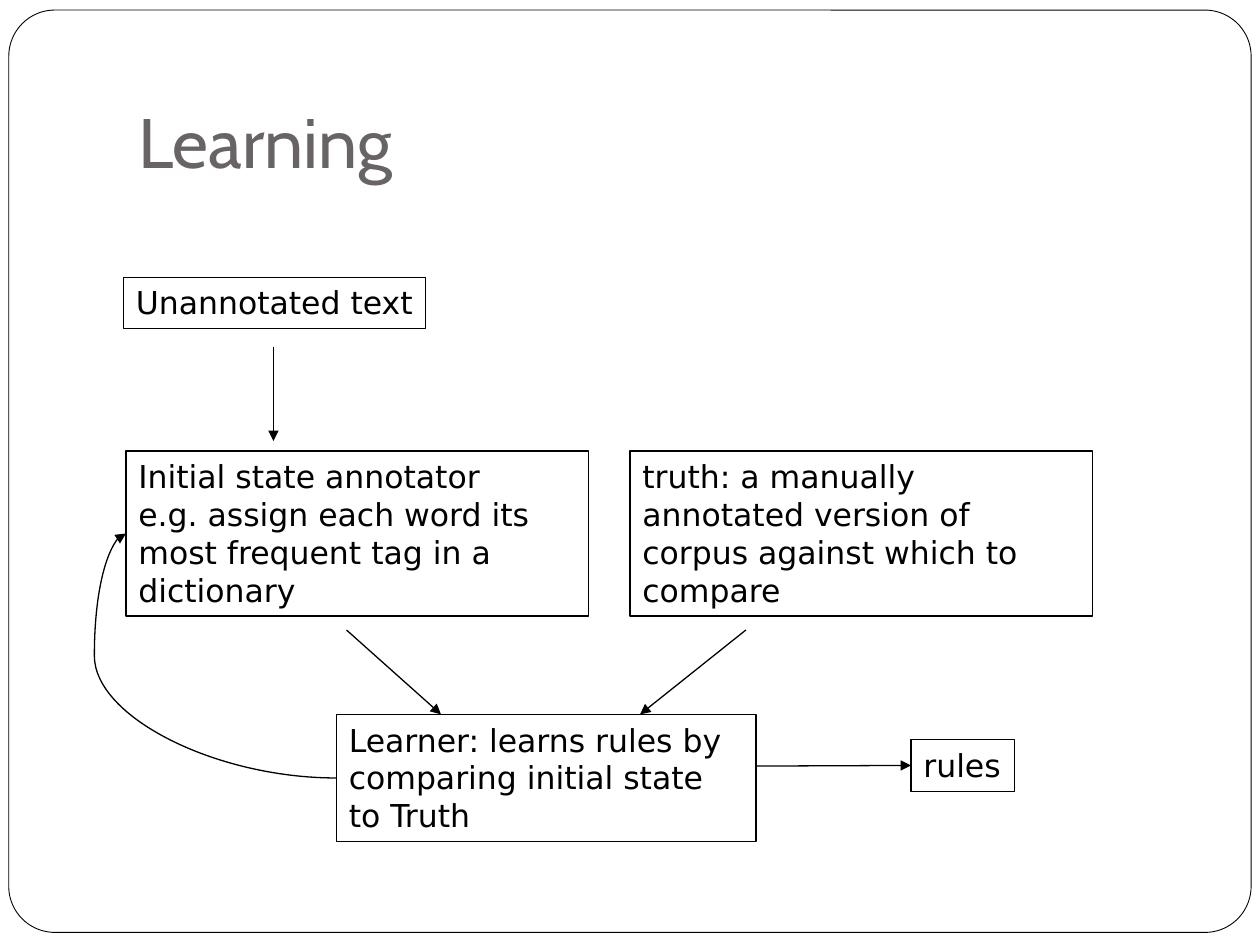
from lxml.etree import SubElement
from pptx import Presentation
from pptx.dml.color import RGBColor
from pptx.enum.shapes import MSO_CONNECTOR as Conn, MSO_SHAPE as Shape
from pptx.enum.text import MSO_ANCHOR as Anchor, MSO_AUTO_SIZE as Fit, PP_ALIGN as Align
from pptx.oxml.ns import qn
from pptx.util import Inches, Pt

BLACK = RGBColor(0x00, 0x00, 0x00)
WHITE = RGBColor(0xFF, 0xFF, 0xFF)
GRAY = RGBColor(0x69, 0x64, 0x64)
LEFT = 1  # connection site on a rectangle


def write(frame, text, font="DejaVu Sans", size=18, color=BLACK):
    frame.text = text
    for par in frame.paragraphs:
        par.alignment = Align.LEFT
        par.font.name = font
        par.font.size = Pt(size)
        par.font.color.rgb = color


def stroke(line, width=0.75):
    line.color.rgb = BLACK
    line.width = Pt(width)


def add_frame(slide, x, y, w, h):
    """Draw the rounded page border behind everything else."""
    card = slide.shapes.add_shape(Shape.ROUNDED_RECTANGLE,
                                  Inches(x), Inches(y), Inches(w), Inches(h))
    card.adjustments[0] = 0.05
    card.shadow.inherit = False
    card.fill.solid()
    card.fill.fore_color.rgb = WHITE
    stroke(card.line, 0.5)
    card.element.getparent().insert(2, card.element)


def add_title(slide, text, x, y, w, h):
    title = slide.shapes.title
    title.left, title.top = Inches(x), Inches(y)
    title.width, title.height = Inches(w), Inches(h)
    frame = title.text_frame
    frame.auto_size = Fit.NONE
    frame.vertical_anchor = Anchor.BOTTOM
    frame.margin_bottom = Inches(0.1)
    write(frame, text, font="Cabin", size=40, color=GRAY)


def add_box(slide, text, x, y, w, h, wrap=True):
    box = slide.shapes.add_textbox(Inches(x), Inches(y), Inches(w), Inches(h))
    stroke(box.line)
    box.text_frame.word_wrap = wrap
    box.text_frame.auto_size = Fit.SHAPE_TO_FIT_TEXT
    write(box.text_frame, text)
    return box


def add_arrow(slide, start, end, kind=Conn.STRAIGHT):
    arrow = slide.shapes.add_connector(kind, *map(Inches, start + end))
    stroke(arrow.line)
    props = arrow.element.spPr
    SubElement(props.find(qn("a:ln")), qn("a:tailEnd"), type="triangle")
    SubElement(props, qn("a:effectLst"))
    return arrow


def add_loop(slide, source, target):
    """Curve from the left side of source back to the left side of target."""
    loop = add_arrow(slide, (2.67, 6.17), (1, 4.24), Conn.CURVE)
    loop.begin_connect(source, LEFT)
    loop.end_connect(target, LEFT)
    guides = loop.element.spPr.find(qn("a:prstGeom")).find(qn("a:avLst"))
    SubElement(guides, qn("a:gd"), name="adj1", fmla="val 115000")


def add_flow(slide, x, y):
    """Place the learning diagram with its first column at x and top at y."""
    def at(dx, dy):
        return x + dx, y + dy

    add_box(slide, "Unannotated text", *at(-0.02, 0), 2.4, 0.41, wrap=False)
    state = add_box(slide, "Initial state annotator\n"
                    "e.g. assign each word its most frequent tag in a dictionary",
                    *at(0, 1.38), 3.67, 1.31)
    add_box(slide, "truth: a manually annotated version of corpus "
            "against which to compare", *at(4, 1.38), 3.67, 1.31)
    learner = add_box(slide, "Learner: learns rules by comparing initial state to Truth",
                      *at(1.67, 3.47), 3.33, 1.01)
    rules = add_box(slide, "rules", *at(6.23, 3.67), 0.82, 0.41, wrap=False)

    add_arrow(slide, at(1.17, 0.55), at(1.17, 1.3))
    add_arrow(slide, at(1.75, 2.8), at(2.5, 3.47))
    add_arrow(slide, at(4.92, 2.8), at(4.08, 3.47))
    add_arrow(slide, at(5, 3.88), at(6.23, 3.88)).end_connect(rules, LEFT)
    add_loop(slide, learner, state)


def main():
    deck = Presentation()
    deck.slide_width, deck.slide_height = Inches(10), Inches(7.5)
    slide = deck.slides.add_slide(deck.slide_layouts[5])
    add_frame(slide, 0.07, 0.08, 9.86, 7.32)
    add_title(slide, "Learning", 1, 0.3, 8.5, 1.25)
    add_flow(slide, 1, 2.2)
    deck.save("out.pptx")


if __name__ == "__main__":
    main()
